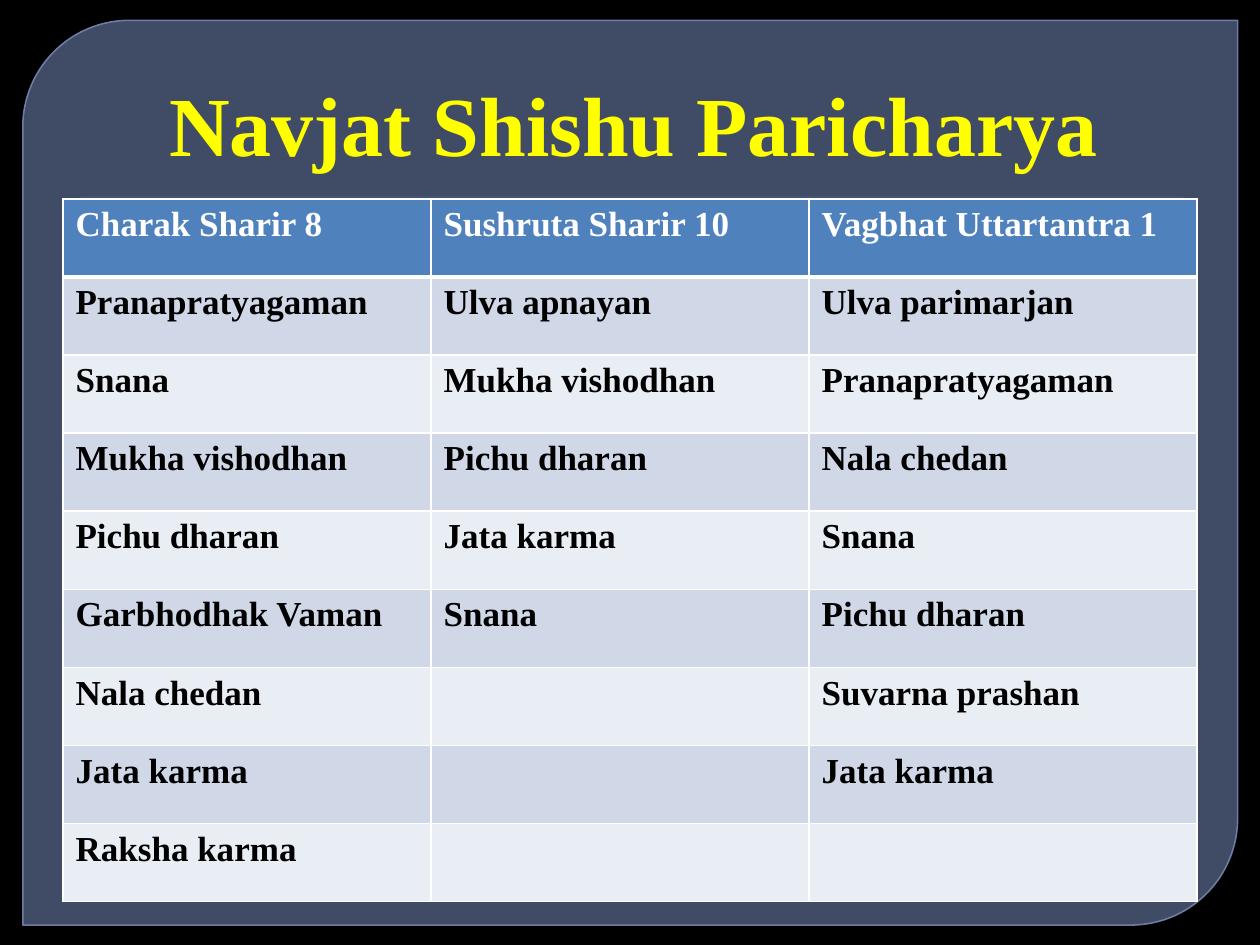
"""Build a slide comparing newborn care steps in three classical texts."""
from lxml import etree
from pptx import Presentation
from pptx import util as u
from pptx.dml import color
from pptx.enum import shapes, text
from pptx.oxml import ns

FONT = "Times New Roman"
COLUMNS = {
    "Charak Sharir 8": ["Pranapratyagaman", "Snana", "Mukha vishodhan", "Pichu dharan",
                        "Garbhodhak Vaman", "Nala chedan", "Jata karma", "Raksha karma"],
    "Sushruta Sharir 10": ["Ulva apnayan", "Mukha vishodhan", "Pichu dharan",
                           "Jata karma", "Snana"],
    "Vagbhat Uttartantra 1": ["Ulva parimarjan", "Pranapratyagaman", "Nala chedan", "Snana",
                              "Pichu dharan", "Suvarna prashan", "Jata karma"],
}


def rgb(value):
    return color.RGBColor.from_string(value)


def paint(fill, value):
    fill.solid()
    fill.fore_color.rgb = rgb(value)


def set_alpha(parent, percent):
    clr = parent.find(ns.qn("a:solidFill")).find(ns.qn("a:srgbClr"))
    etree.SubElement(clr, ns.qn("a:alpha"), val=str(percent * 1000))


class Deck:
    def __init__(self, prs, font):
        self.font = font
        self.s = prs.slides.add_slide(prs.slide_layouts[6])

    def background(self, value):
        paint(self.s.background.fill, value)

    def shape(self, kind, box, fill, alpha, line=None, adjustments=()):
        sp = self.s.shapes.add_shape(kind, *map(u.Cm, box))
        sp.shadow.inherit = False
        for i, value in enumerate(adjustments):
            sp.adjustments[i] = value
        paint(sp.fill, fill)
        spPr = sp.element.spPr
        set_alpha(spPr, alpha)
        if line:
            paint(sp.line.fill, line)
            sp.line.width = u.Pt(0.87)
            set_alpha(spPr.find(ns.qn("a:ln")), 88)
        else:
            sp.line.fill.background()

    def label(self, tf, content, size, value):
        tf.text = content
        for r in tf.paragraphs[0].runs:
            r.font.name, r.font.size, r.font.bold = self.font, u.Pt(size), True
            r.font.color.rgb = rgb(value)

    def title(self, content, box, size, value):
        tf = self.s.shapes.add_textbox(*map(u.Cm, box)).text_frame
        tf.word_wrap = True
        tf.vertical_anchor = text.MSO_ANCHOR.BOTTOM
        self.label(tf, content, size, value)
        p = tf.paragraphs[0]
        p.alignment = text.PP_ALIGN.CENTER
        p._p.get_or_add_pPr().set("marL", str(u.Cm(0.15)))

    def borders(self, cell, value, widths):
        tcPr = cell._tc.get_or_add_tcPr()
        for i, (side, width) in enumerate(widths.items()):
            ln = etree.Element(ns.qn("a:ln" + side), w=str(u.Pt(width)))
            fill = etree.SubElement(ln, ns.qn("a:solidFill"))
            etree.SubElement(fill, ns.qn("a:srgbClr"), val=value)
            tcPr.insert(i, ln)

    def table(self, columns, left, top, widths, height):
        n = 1 + max(map(len, columns.values()))
        box = map(u.Cm, (left, top, sum(widths), height))
        tbl = self.s.shapes.add_table(n, len(columns), *box).table
        for row in tbl.rows:
            row.height = u.Cm(height / n)
        for c, (head, steps) in enumerate(columns.items()):
            tbl.columns[c].width = u.Cm(widths[c])
            entries = [head] + steps
            for r in range(n):
                cell = tbl.cell(r, c)
                if r < len(entries):
                    self.label(cell.text_frame, entries[r], 20, "000000" if r else "FFFFFF")
                paint(cell.fill, ("D0D8E8" if r % 2 else "E9EDF4") if r else "4F81BD")
                self.borders(cell, "FFFFFF", {"L": 1, "R": 1, "T": 3 if r == 1 else 1,
                                              "B": 1 if r else 3})


def main():
    prs = Presentation()
    prs.slide_width, prs.slide_height = u.Cm(25.4), u.Cm(19.05)
    deck = Deck(prs, FONT)
    deck.background("000000")
    deck.shape(shapes.MSO_SHAPE.ROUND_2_DIAG_RECTANGLE, (0.46, 0.41, 24.49, 18.24),
               "63759D", 65, line="7989B3", adjustments=(0.118, 0))
    deck.shape(shapes.MSO_SHAPE.RECTANGLE, (1.63, 3.96, 22.22, 0.02), "4F81BD", 35)
    deck.title("Navjat Shishu Paricharya", (1.27, 0.71, 22.86, 2.9), 48, "FFFF00")
    deck.table(COLUMNS, 1.27, 4.01, (7.42, 7.62, 7.82), 14.17)
    prs.save("out.pptx")


if __name__ == "__main__":
    main()
